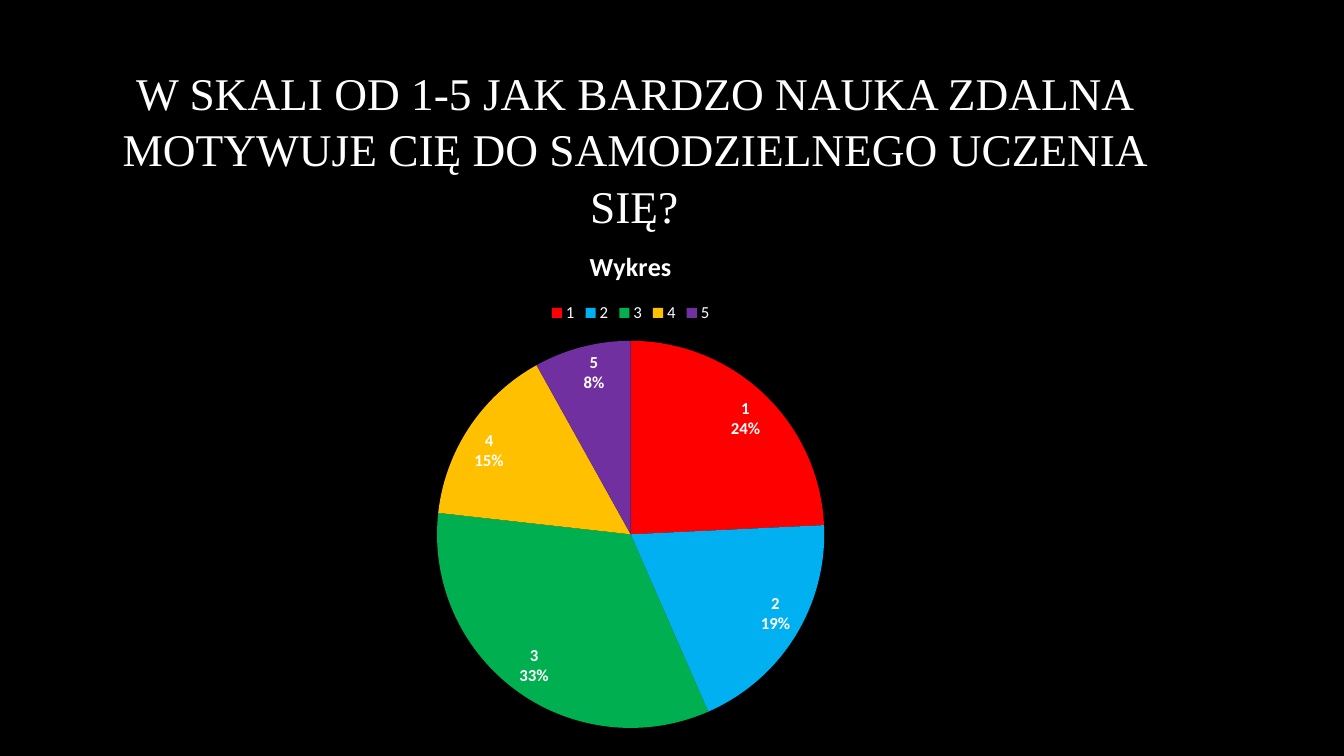
from lxml.etree import SubElement
from pptx import Presentation
from pptx.chart.data import CategoryChartData
from pptx.dml.color import RGBColor
from pptx.enum.chart import XL_CHART_TYPE, XL_LABEL_POSITION, XL_LEGEND_POSITION
from pptx.enum.text import MSO_ANCHOR, PP_ALIGN
from pptx.oxml.ns import qn
from pptx.util import Inches, Pt

QUESTION = "W SKALI OD 1-5 JAK BARDZO NAUKA ZDALNA MOTYWUJE CIĘ DO SAMODZIELNEGO UCZENIA SIĘ?"
CHART_TITLE = "Wykres"
ANSWERS = [
    ("1", 24, "FF0000"),
    ("2", 19, "00B0F0"),
    ("3", 33, "00B050"),
    ("4", 15, "FFC000"),
    ("5", 8, "7030A0"),
]
QUESTION_BOX = (0.75, 0.67, 11.08, 1.59)
CHART_BOX = (-0.1, 2.26, 12.71, 5.1)
THEME = {
    "background": "000000",
    "text": "FFFFFF",
    "question_font": "Times New Roman",
    "chart_font": "Calibri",
    "question": 32.4,
    "chart_title": 18.6,
    "chart_text": 12,
}


def style(font, face, size, bold=False):
    font.name = THEME[face]
    font.size = Pt(THEME[size])
    font.bold = bold
    font.color.rgb = RGBColor.from_string(THEME["text"])


def add_question(s):
    tf = s.shapes.add_textbox(*map(Inches, QUESTION_BOX)).text_frame
    tf.word_wrap = True
    tf.vertical_anchor = MSO_ANCHOR.MIDDLE
    p = tf.paragraphs[0]
    p.text = QUESTION
    p.alignment = PP_ALIGN.CENTER
    p.line_spacing = 1.04
    style(p.font, "question_font", "question")


def add_pie(s):
    data = CategoryChartData()
    data.categories = [name for name, _, _ in ANSWERS]
    data.add_series(CHART_TITLE, [value for _, value, _ in ANSWERS])
    chart = s.shapes.add_chart(XL_CHART_TYPE.PIE, *map(Inches, CHART_BOX), data).chart
    style(chart.font, "chart_font", "chart_text")

    chart.has_title = True
    p = chart.chart_title.text_frame.paragraphs[0]
    p.text = CHART_TITLE
    style(p.font, "chart_font", "chart_title", bold=True)
    chart.chart_title.include_in_layout = False

    chart.has_legend = True
    chart.legend.position = XL_LEGEND_POSITION.TOP
    chart.legend.include_in_layout = False
    style(chart.legend.font, "chart_font", "chart_text")

    plot = chart.plots[0]
    plot.vary_by_categories = True
    series = plot.series[0]
    for i, (_, _, color) in enumerate(ANSWERS):
        fill = series.points[i].format.fill
        fill.solid()
        fill.fore_color.rgb = RGBColor.from_string(color)

    labels = series.data_labels
    labels.show_value = False
    labels.show_category_name = True
    labels.show_percentage = True
    labels.position = XL_LABEL_POSITION.INSIDE_END
    style(labels.font, "chart_font", "chart_text", bold=True)
    dLbls = series.data_labels._element
    separator = SubElement(dLbls, qn("c:separator"))
    separator.text = "\n"
    dLbls.find(qn("c:showBubbleSize")).addnext(separator)


def main():
    prs = Presentation()
    prs.slide_width, prs.slide_height = Inches(13.33), Inches(7.5)
    s = prs.slides.add_slide(prs.slide_layouts[6])
    s.background.fill.solid()
    s.background.fill.fore_color.rgb = RGBColor.from_string(THEME["background"])
    add_question(s)
    add_pie(s)
    prs.save("out.pptx")


if __name__ == "__main__":
    main()
